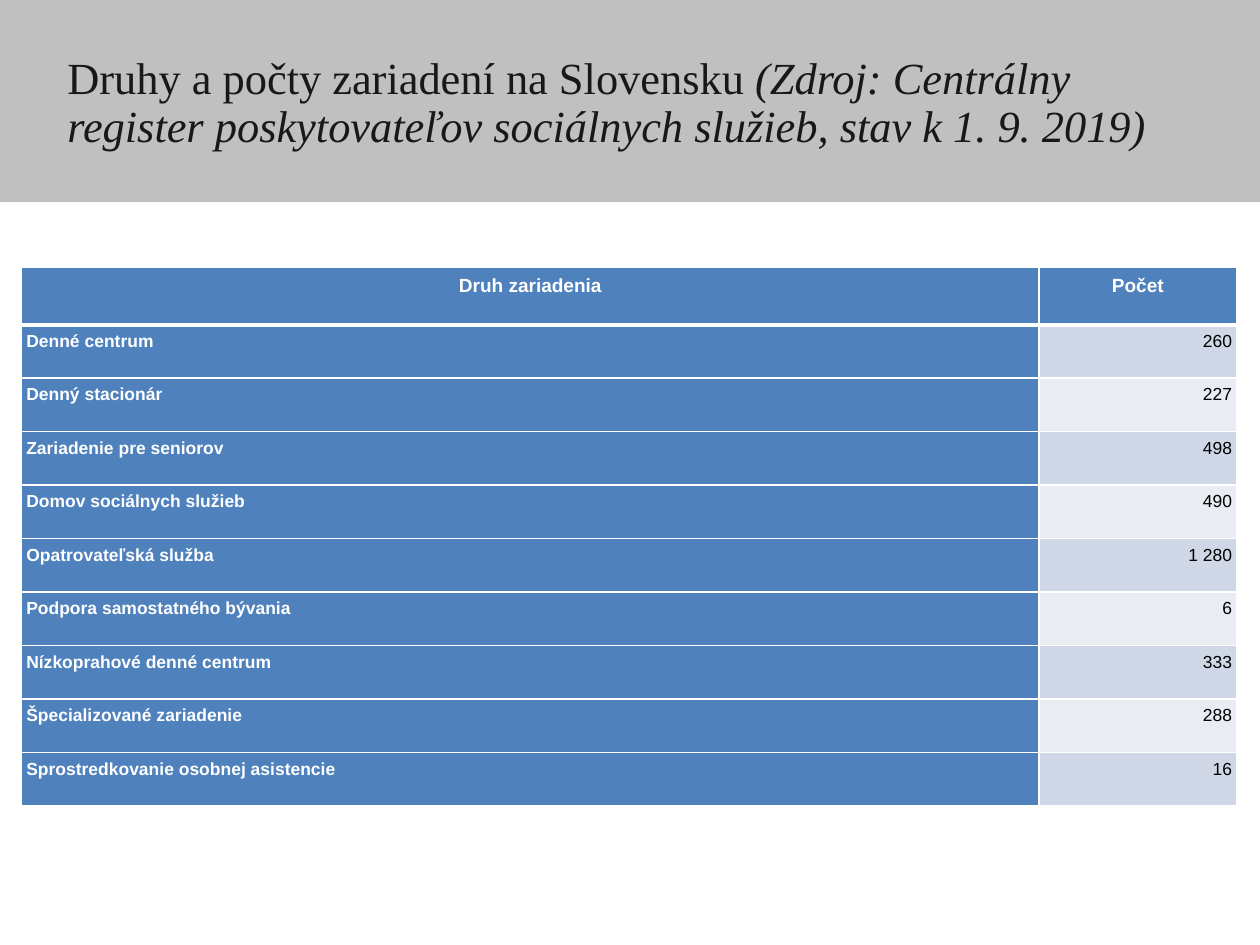
from pptx import Presentation
from pptx import util as u
from pptx.dml.color import RGBColor
from pptx.enum import shapes, text
from pptx.oxml import parse_xml
from pptx.oxml.ns import nsdecls

TITLE = [
    ("Druhy a počty zariadení na Slovensku ", False),
    ("(Zdroj: Centrálny register poskytovateľov sociálnych služieb, "
     "stav k 1. 9. 2019)", True),
]
HEAD = ("Druh zariadenia", "Počet")
ROWS = [
    ("Denné centrum", "260"),
    ("Denný stacionár", "227"),
    ("Zariadenie pre seniorov", "498"),
    ("Domov sociálnych služieb", "490"),
    ("Opatrovateľská služba", "1 280"),
    ("Podpora samostatného bývania", "6"),
    ("Nízkoprahové denné centrum", "333"),
    ("Špecializované zariadenie", "288"),
    ("Sprostredkovanie osobnej asistencie", "16"),
]
WIDE, HIGH = 28 / 2.54, 21 / 2.54
COLS = (8.9, 1.73)
LEFT, TOP, TALL, HEAD_H = 0.19, 2.34, 4.71, 0.5
BLUE, BANDS = "4F81BD", ("D0D8E7", "E9ECF3")
ALIGN = text.PP_ALIGN


def paint(obj, color):
    obj.solid()
    obj.fore_color.rgb = RGBColor.from_string(color)


def style(run, name, size, color, bold=False, italic=False):
    font = run.font
    font.name, font.size = name, u.Pt(size)
    font.bold, font.italic = bold, italic
    paint(font.fill, color)


def border(cell, sides):
    props = cell._tc.get_or_add_tcPr()
    for place, (side, width) in enumerate(sides.items()):
        props.insert(place, parse_xml(
            f'<a:{side} {nsdecls("a")} w="{u.Pt(width)}"><a:solidFill>'
            f'<a:srgbClr val="FFFFFF"/></a:solidFill></a:{side}>'))


def fill_cell(cell, words, row, col):
    head = row == 0
    label = head or col == 0
    paint(cell.fill, BLUE if label else BANDS[(row - 1) % 2])
    cell.margin_left = cell.margin_right = u.Inches(0.04)
    cell.margin_top = cell.margin_bottom = u.Inches(0.05)
    cell.text_frame.text = words
    para = cell.text_frame.paragraphs[0]
    para.alignment = ALIGN.CENTER if head else (ALIGN.LEFT, ALIGN.RIGHT)[col]
    para.line_spacing, para.space_after = 1.07, u.Pt(8)
    style(para.runs[0], "Arial", 12 if head else 11,
          "FFFFFF" if label else "000000", bold=label)
    border(cell, {"lnL": 0.96, "lnR": 0.96,
                  "lnT": 3 if row == 1 else 0.96, "lnB": 3 if head else 0.96})


def add_title(slide):
    band = slide.shapes.add_shape(shapes.MSO_SHAPE.RECTANGLE, 0, 0,
                                  u.Inches(WIDE), u.Inches(1.77))
    band.shadow.inherit = False
    paint(band.fill, "C0C0C0")
    band.line.fill.background()
    box = slide.shapes.add_textbox(*map(u.Inches, (0.59, 0.23, 9.84, 1.37)))
    frame = box.text_frame
    frame.word_wrap = True
    frame.vertical_anchor = text.MSO_ANCHOR.MIDDLE
    frame.margin_left = frame.margin_right = 0
    frame.margin_top = frame.margin_bottom = 0
    para = frame.paragraphs[0]
    para.line_spacing = 0.9
    for words, slant in TITLE:
        run = para.add_run()
        run.text = words
        style(run, "Times New Roman", 28, "181818", italic=slant)


def add_grid(slide):
    data = [HEAD] + ROWS
    grid = slide.shapes.add_table(
        len(data), len(COLS), u.Inches(LEFT), u.Inches(TOP),
        u.Inches(sum(COLS)), u.Inches(TALL)).table
    for col, width in zip(grid.columns, COLS):
        col.width = u.Inches(width)
    for row, pair in enumerate(data):
        high = (TALL - HEAD_H) / len(ROWS) if row else HEAD_H
        grid.rows[row].height = u.Inches(high)
        for col, words in enumerate(pair):
            fill_cell(grid.cell(row, col), words, row, col)


def main():
    deck = Presentation()
    deck.slide_width = u.Inches(WIDE)
    deck.slide_height = u.Inches(HIGH)
    slide = deck.slides.add_slide(deck.slide_layouts[6])
    add_title(slide)
    add_grid(slide)
    deck.save("out.pptx")


if __name__ == "__main__":
    main()
